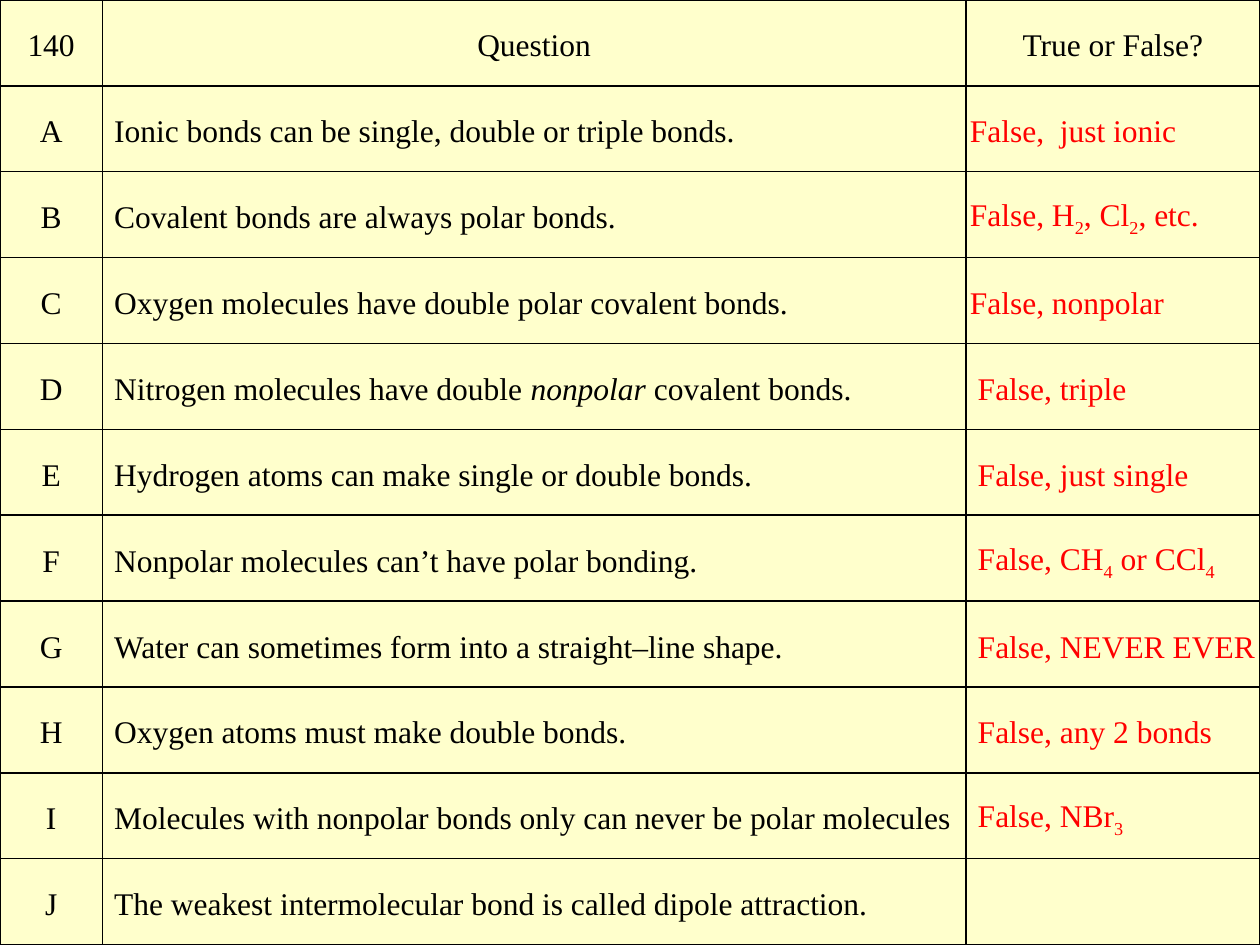
from lxml import etree
from pptx import Presentation
from pptx import util as u
from pptx.dml.color import RGBColor
from pptx.enum import text
from pptx.oxml import ns

CREAM = RGBColor(0xFF, 0xFF, 0xCC)
BLACK = RGBColor(0, 0, 0)
RED = RGBColor(0xFF, 0, 0)

HEADINGS = ["140", "Question", "True or False?"]
INSET = 2.25
SPACE = 4.5
SUB, ITALIC = "sub", "italic"

# fmt: off
STATEMENTS = [
    ("A", ["Ionic bonds can be single, double or triple bonds."], ["False,  just ionic"], 0),
    ("B", ["Covalent bonds are always polar bonds."],
     ["False, H", ("2", SUB), ", Cl", ("2", SUB), ", etc."], 0),
    ("C", ["Oxygen molecules have double polar covalent bonds."], ["False, nonpolar"], 0),
    ("D", ["Nitrogen molecules have double ", ("nonpolar", ITALIC), " covalent bonds."],
     ["False, triple"], SPACE),
    ("E", ["Hydrogen atoms can make single or double bonds."], ["False, just single"], SPACE),
    ("F", ["Nonpolar molecules can’t have polar bonding."],
     ["False, CH", ("4", SUB), " or CCl", ("4", SUB)], SPACE),
    ("G", ["Water can sometimes form into a straight–line shape."], ["False, NEVER EVER"], SPACE),
    ("H", ["Oxygen atoms must make double bonds."], ["False, any 2 bonds"], SPACE),
    ("I", ["Molecules with nonpolar bonds only can never be polar molecules"],
     ["False, NBr", ("3", SUB)], SPACE),
    ("J", ["The weakest intermolecular bond is called dipole attraction."], [], 0),
]
# fmt: on


class QuizSlide:
    """Hold the quiz style and the current slide, and draw its elements."""

    font = "Times New Roman"
    size = u.Pt(18)

    def __init__(self, deck):
        self.slide = deck.slides.add_slide(deck.slide_layouts[6])
        self.slide.background.fill.solid()
        self.slide.background.fill.fore_color.rgb = CREAM

    def grid(self, widths, row_count, height):
        frame = self.slide.shapes.add_table(
            row_count, len(widths), 0, 0, u.Pt(sum(widths)), u.Pt(height))
        grid = frame.table
        grid.first_row = grid.horz_banding = False
        for column, width in zip(grid.columns, widths):
            column.width = u.Pt(width)
        for row in grid.rows:
            row.height = u.Pt(height / row_count)
        return grid

    def borders(self, cell):
        properties = cell._tc.get_or_add_tcPr()
        for side in ("lnL", "lnR", "lnT", "lnB"):
            line = etree.SubElement(properties, ns.qn("a:" + side), w=str(u.Pt(1)))
            fill = etree.SubElement(line, ns.qn("a:solidFill"))
            etree.SubElement(fill, ns.qn("a:srgbClr"), val=str(BLACK))

    def cell(self, cell, runs, color=BLACK, align=text.PP_ALIGN.LEFT, indent=0):
        self.borders(cell)
        cell.fill.solid()
        cell.fill.fore_color.rgb = CREAM
        cell.vertical_anchor = text.MSO_ANCHOR.MIDDLE
        cell.margin_left = u.Pt(INSET + indent)
        cell.margin_right = cell.margin_top = cell.margin_bottom = u.Pt(INSET)
        paragraph = cell.text_frame.paragraphs[0]
        paragraph.alignment = align
        paragraph.line_spacing = 1.19
        paragraph.space_after = u.Pt(6)
        for part in runs:
            wording, style = (part, None) if isinstance(part, str) else part
            self.run(paragraph, wording, color, style)

    def run(self, paragraph, wording, color, style):
        run = paragraph.add_run()
        run.text = wording
        run.font.name = self.font
        run.font.size = self.size
        run.font.color.rgb = color
        if style == ITALIC:
            run.font.italic = True
        elif style == SUB:
            run._r.get_or_add_rPr().set("baseline", "-25000")


def main():
    deck = Presentation()
    deck.slide_width, deck.slide_height = u.Pt(720), u.Pt(540)
    quiz = QuizSlide(deck)
    grid = quiz.grid([58.5, 493.5, 168], len(STATEMENTS) + 1, 540)
    center = text.PP_ALIGN.CENTER
    for column, heading in enumerate(HEADINGS):
        quiz.cell(grid.cell(0, column), [heading], align=center)
    for row, (letter, statement, answer, indent) in enumerate(STATEMENTS, 1):
        quiz.cell(grid.cell(row, 0), [letter], align=center)
        quiz.cell(grid.cell(row, 1), statement, indent=SPACE)
        quiz.cell(grid.cell(row, 2), answer, RED, indent=indent)
    deck.save("out.pptx")


if __name__ == "__main__":
    main()
